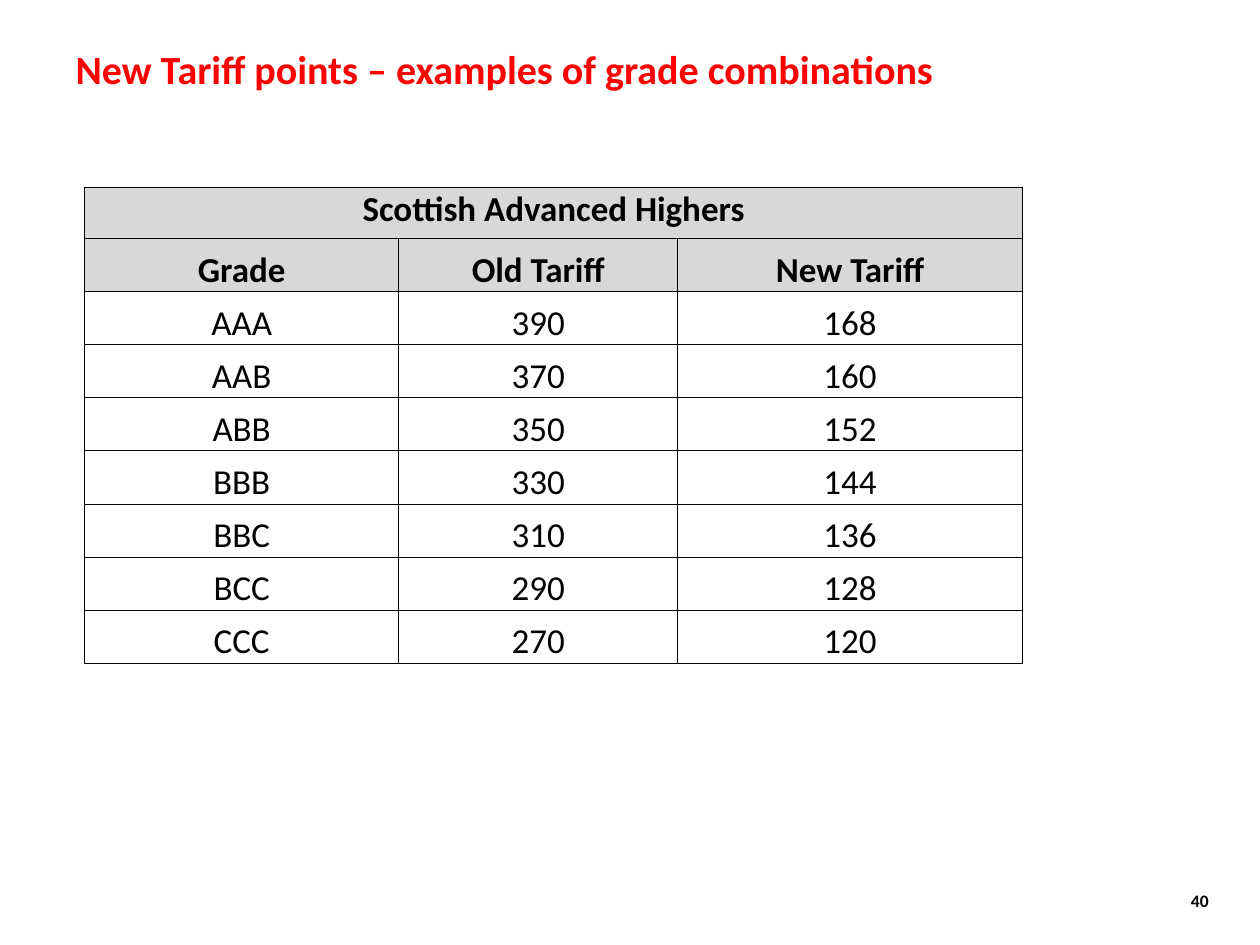
from lxml import etree
from pptx import Presentation
from pptx.dml.color import RGBColor
from pptx.enum.text import MSO_ANCHOR, PP_ALIGN
from pptx.oxml.ns import qn
from pptx.util import Inches, Pt

RED = RGBColor(0xFF, 0x00, 0x00)
BLACK = RGBColor(0x00, 0x00, 0x00)
GREY = RGBColor(0xD8, 0xD8, 0xD8)
LEFT, CENTER, RIGHT = PP_ALIGN.LEFT, PP_ALIGN.CENTER, PP_ALIGN.RIGHT
TOP, MIDDLE, BOTTOM = MSO_ANCHOR.TOP, MSO_ANCHOR.MIDDLE, MSO_ANCHOR.BOTTOM
FONT = "Calibri"

HEADING = "Scottish Advanced Highers"
COLUMNS = ("Grade", "Old Tariff", "New Tariff")
TARIFFS = [
    ("AAA", 390, 168),
    ("AAB", 370, 160),
    ("ABB", 350, 152),
    ("BBB", 330, 144),
    ("BBC", 310, 136),
    ("BCC", 290, 128),
    ("CCC", 270, 120),
]
COL_WIDTHS = (3.49, 3.1, 3.83)
HEADING_HEIGHT, ROW_HEIGHT = 0.57, 0.59


def write(tf, text, size, color=BLACK, bold=False, align=LEFT):
    tf.text = text
    p = tf.paragraphs[0]
    p.alignment = align
    font = p.runs[0].font
    font.name, font.size, font.bold = FONT, Pt(size), bold
    font.color.rgb = color


def add_text(s, box, text, size, color, align=LEFT, anchor=TOP):
    sp = s.shapes.add_textbox(*map(Inches, box))
    tf = sp.text_frame
    tf.word_wrap = True
    tf.vertical_anchor = anchor
    tf.margin_left = tf.margin_right = Inches(0.14)
    tf.margin_top = tf.margin_bottom = Inches(0.07)
    write(tf, text, size, color, True, align)


def add_borders(cell):
    # Border lines must come before the fill in the cell properties
    tc_pr = cell._tc.get_or_add_tcPr()
    for i, side in enumerate(("lnL", "lnR", "lnT", "lnB")):
        ln = etree.Element(qn(f"a:{side}"), w=str(Pt(0.5)))
        fill = etree.SubElement(ln, qn("a:solidFill"))
        etree.SubElement(fill, qn("a:srgbClr"), val=str(BLACK))
        tc_pr.insert(i, ln)


def style_cell(cell, header, anchor):
    cell.margin_left = cell.margin_right = cell.margin_top = Inches(0.01)
    cell.margin_bottom = 0
    cell.vertical_anchor = anchor
    if header:
        cell.fill.solid()
        cell.fill.fore_color.rgb = GREY
    else:
        cell.fill.background()
    add_borders(cell)


def add_tariff_table(s):
    rows = [(HEADING, None, None), COLUMNS, *TARIFFS]
    heights = [HEADING_HEIGHT] + [ROW_HEIGHT] * (len(rows) - 1)
    table = s.shapes.add_table(
        len(rows), len(COLUMNS), Inches(0.94), Inches(2.08),
        Inches(sum(COL_WIDTHS)), Inches(sum(heights))).table
    table.first_row = table.horz_banding = False
    for column, width in zip(table.columns, COL_WIDTHS):
        column.width = Inches(width)
    for row, height in zip(table.rows, heights):
        row.height = Inches(height)

    table.cell(0, 0).merge(table.cell(0, len(COLUMNS) - 1))
    for r, values in enumerate(rows):
        header = r < 2
        for c, value in enumerate(values):
            cell = table.cell(r, c)
            style_cell(cell, header, BOTTOM if r else TOP)
            if value is not None:
                write(cell.text_frame, str(value), 28, bold=header, align=CENTER)


def main():
    prs = Presentation()
    prs.slide_width, prs.slide_height = Inches(14), Inches(10.5)
    s = prs.slides.add_slide(prs.slide_layouts[6])

    # Title
    add_text(s, (0.7, 0.42, 12.6, 1.75),
             "New Tariff points – examples of grade combinations", 32, RED)
    # Slide number
    add_text(s, (12.73, 9.73, 0.84, 0.56), "40", 14, BLACK, RIGHT, MIDDLE)
    # Old and new points for each grade combination
    add_tariff_table(s)

    prs.save("out.pptx")


if __name__ == "__main__":
    main()
